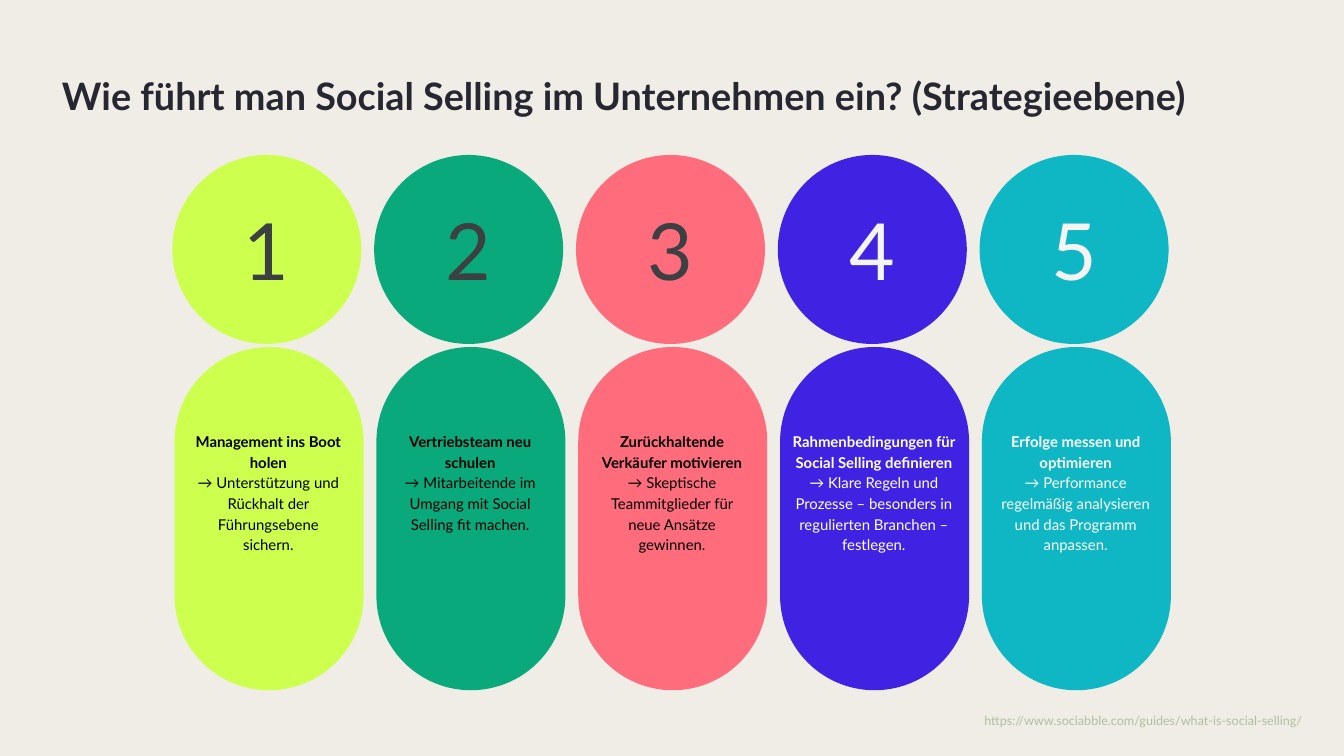
from pptx import Presentation
from pptx.dml.color import RGBColor
from pptx.enum.shapes import MSO_SHAPE
from pptx.enum.text import MSO_ANCHOR, PP_ALIGN
from pptx.util import Inches, Pt


def paint(text):
    """Turn a hex string into a colour."""
    return RGBColor.from_string(text)


class Deck:
    """Holds the style and the current slide."""

    font = "Lato"
    back = "EFEDE6"

    def __init__(self, wide, high):
        """Open a blank slide of the given size."""
        self.prs = Presentation()
        self.prs.slide_width = Inches(wide)
        self.prs.slide_height = Inches(high)
        self.slide = self.prs.slides.add_slide(self.prs.slide_layouts[6])
        fill = self.slide.background.fill
        fill.solid()
        fill.fore_color.rgb = paint(self.back)

    def shape(self, kind, box, color):
        """Add a plain filled shape."""
        item = self.slide.shapes.add_shape(kind, *map(Inches, box))
        item.shadow.inherit = False
        item.fill.solid()
        item.fill.fore_color.rgb = paint(color)
        item.line.fill.background()
        return item

    def pill(self, box, color):
        """Add a rectangle with fully round ends."""
        self.shape(MSO_SHAPE.ROUNDED_RECTANGLE, box, color).adjustments[0] = 0.5

    def text(self, box, lines, size, color, align=PP_ALIGN.CENTER,
             anchor=MSO_ANCHOR.MIDDLE, inset=0.1, space=1.0):
        """Add a text box from pairs of wording and boldness."""
        frame = self.slide.shapes.add_textbox(*map(Inches, box)).text_frame
        frame.word_wrap = True
        frame.vertical_anchor = anchor
        frame.margin_left = frame.margin_right = Inches(inset)
        frame.margin_top = frame.margin_bottom = Inches(inset)
        for i, (words, bold) in enumerate(lines):
            para = frame.add_paragraph() if i else frame.paragraphs[0]
            para.alignment = align
            para.line_spacing = space
            run = para.add_run()
            run.text = words
            run.font.name = self.font
            run.font.size = Pt(size)
            run.font.bold = bold
            run.font.color.rgb = paint(color)


DARK = ("3C4043", "000000")
LIGHT = ("F4F4F4", "FFFFFF")
STEPS = [
    ("CDFF4E", DARK, 2.23, "Management ins Boot holen",
     "→ Unterstützung und Rückhalt der Führungsebene sichern."),
    ("0AA97B", DARK, 2.23, "Vertriebsteam neu schulen",
     "→ Mitarbeitende im Umgang mit Social Selling fit machen."),
    ("FF6D7D", DARK, 2.23, "Zurückhaltende Verkäufer motivieren",
     "→ Skeptische Teammitglieder für neue Ansätze gewinnen."),
    ("4022E2", LIGHT, 2.41, "Rahmenbedingungen für Social Selling definieren",
     "→ Klare Regeln und Prozesse – besonders in regulierten Branchen – festlegen."),
    ("0EB7C3", LIGHT, 2.23, "Erfolge messen und optimieren",
     "→ Performance regelmäßig analysieren und das Programm anpassen."),
]


def main():
    """Build the slide and save it."""
    deck = Deck(17.78, 10)
    deck.text((0.76, 0.2, 16.48, 2.03),
              [("Wie führt man Social Selling im Unternehmen ein? (Strategieebene)", True)],
              36, "272731", PP_ALIGN.LEFT, inset=0.06, space=1.15)
    for i, (color, (ink, tone), wide, head, body) in enumerate(STEPS):
        left = 2.28 + 2.67 * i
        deck.shape(MSO_SHAPE.OVAL, (left, 2.05, 2.5, 2.5), color)
        deck.pill((left + 0.03, 4.59, 2.5, 4.54), color)
        deck.text((left + 0.73, 2.92, 1.04, 0.76), [(str(i + 1), False)], 75, ink)
        deck.text((left + 1.27 - wide / 2, 5.59, wide, 2.76),
                  [(head, True), (body, False)], 14.2, tone,
                  anchor=MSO_ANCHOR.TOP, space=1.15)
    deck.text((5.44, 9.17, 12, 0.67),
              [("https://www.sociabble.com/guides/what-is-social-selling/", False)],
              12, "B0BF9F", PP_ALIGN.RIGHT, inset=0.21, space=1.3)
    deck.prs.save("out.pptx")


if __name__ == "__main__":
    main()
